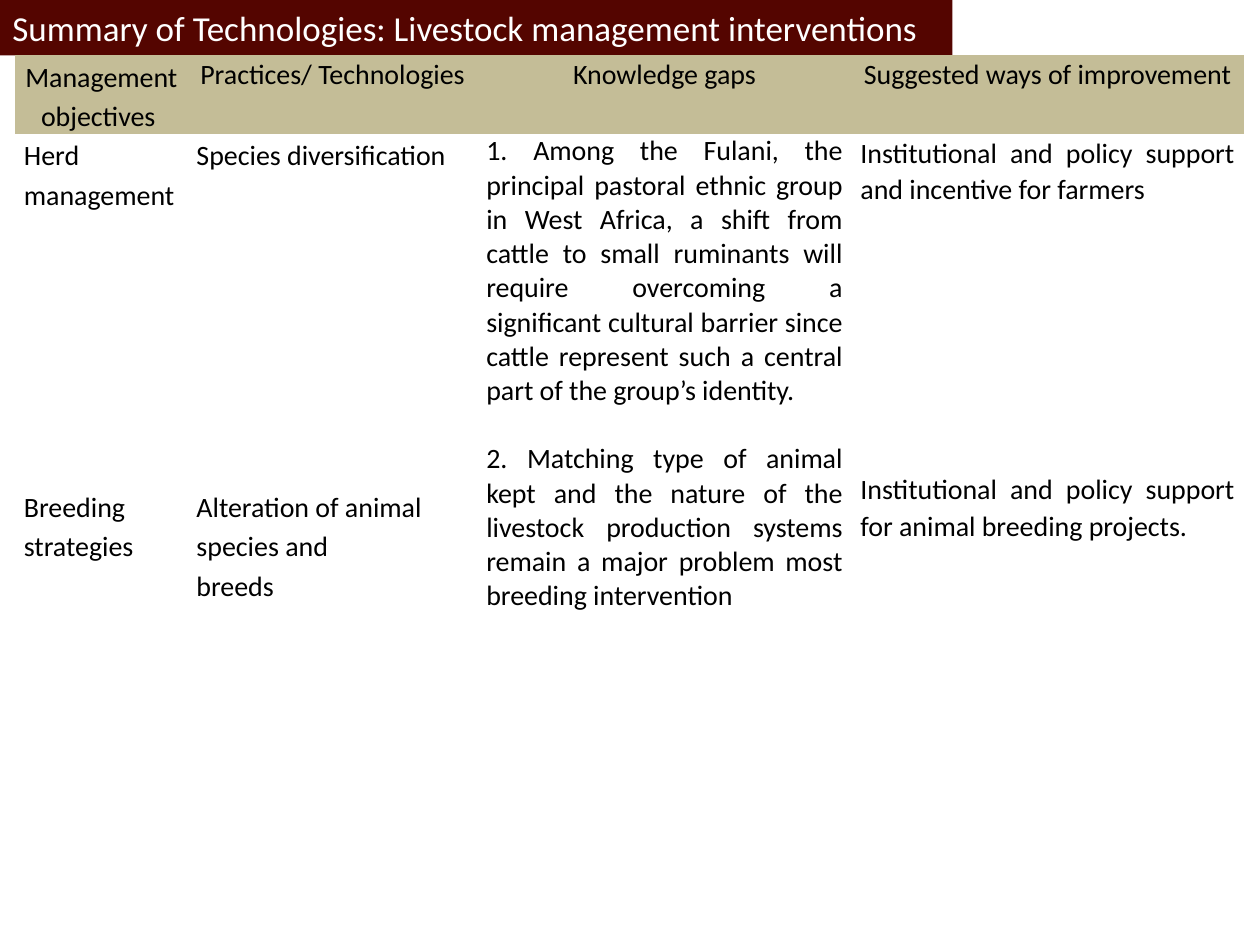
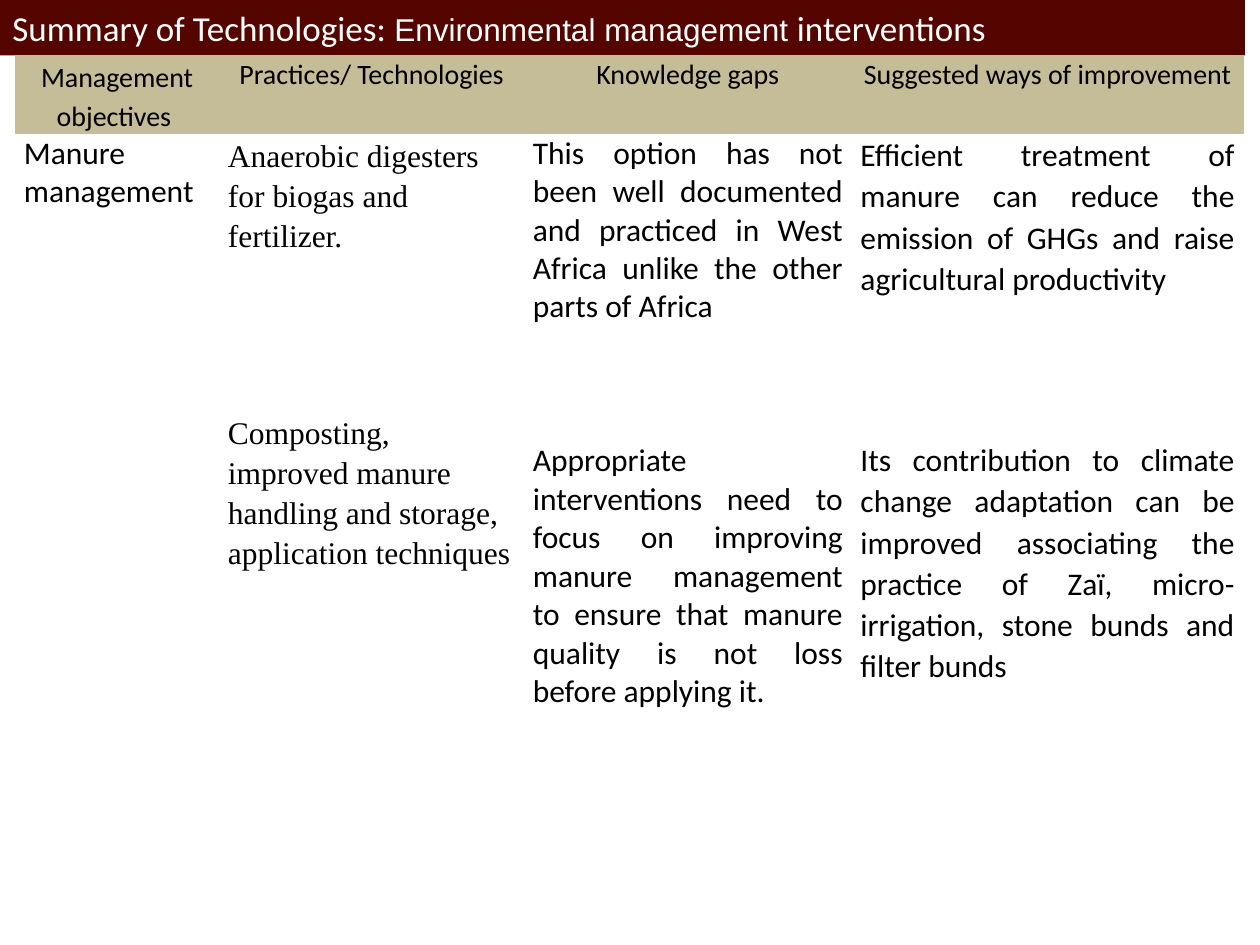
from pptx import Presentation
from pptx.dml.color import RGBColor
from pptx.enum.shapes import MSO_SHAPE
from pptx.enum.text import MSO_ANCHOR, PP_ALIGN as ALIGN
from pptx.oxml.ns import qn
from pptx.util import Inches, Pt

MAROON = RGBColor(0x54, 0x05, 0x00)
TAN = RGBColor(0xC4, 0xBD, 0x97)
WHITE = RGBColor(0xFF, 0xFF, 0xFF)
BLACK = RGBColor(0x00, 0x00, 0x00)
SANS, SERIF = "Calibri", "Times New Roman"
NO_STYLE_NO_GRID = "{2D5ABB26-0587-4C30-8999-92F81FD0307C}"

BAND_HEIGHT = 0.44
TABLE_LEFT = 0.12
HEADER_HEIGHT = 0.61
LOWER_HEIGHTS = [4.16, 0.25, 0.25, 0.32, 0.29, 0.37, 0.22]
# Column, first row and last row of each merged block
MERGES = [(2, 1, 8), (3, 3, 5), (0, 5, 7), (1, 5, 7)]
HEADERS = [
    ("Management objectives\u00a0", 1.15),
    ("Practices/ Technologies", 1.07),
    ("Knowledge gaps", 1.07),
    ("Suggested ways of improvement", 1.07),
]

# Body entries: row, column, paragraphs, line spacing, alignment, font,
# offset from the top of the cell (inches), gap between paragraphs (points)
SLIDES = [
    {
        "title": [("Summary of Technologies: Livestock management interventions", SANS, 20)],
        "band_width": 7.56,
        "columns": [1.37, 2.3, 2.97, 3.11],
        "first_row": 0.65,
        "size": 16,
        "body": [
            (1, 0, ["Herd", "management"], 1.15, ALIGN.LEFT, SANS, 0, 0),
            (1, 1, ["Species diversification"], 1.15, ALIGN.LEFT, SANS, 0, 0),
            (1, 2, ["1. Among the Fulani, the principal pastoral ethnic group in West Africa, "
                    "a shift from cattle to small ruminants will require overcoming a significant "
                    "cultural barrier since cattle represent such a central part of the group’s "
                    "identity.",
                    "2. Matching type of animal kept and the nature of the livestock production "
                    "systems remain a major problem most breeding intervention"],
             1.0, ALIGN.JUSTIFY, SANS, 0, 19.5),
            (1, 3, ["Institutional and policy support and incentive for farmers"],
             1.07, ALIGN.JUSTIFY, SANS, 0, 0),
            (2, 0, ["Breeding strategies"], 1.15, ALIGN.LEFT, SANS, 2.14, 0),
            (2, 1, ["Alteration of animal species and", "breeds"],
             1.15, ALIGN.LEFT, SANS, 2.14, 0),
            (2, 3, ["Institutional and policy support for animal breeding projects."],
             1.07, ALIGN.JUSTIFY, SANS, 2.02, 0),
        ],
    },
    {
        "title": [("Summary of Technologies: ", SANS, 20),
                  ("Environmental management ", "Arial", 18),
                  ("interventions", SANS, 20)],
        "band_width": 9.88,
        "columns": [1.62, 2.42, 2.6, 3.11],
        "first_row": 1.31,
        "size": 18,
        "body": [
            (1, 0, ["Manure", "management"], 1.0, ALIGN.LEFT, SANS, 0, 0),
            (1, 1, ["Anaerobic digesters for biogas and fertilizer."],
             1.15, ALIGN.LEFT, SERIF, 0, 0),
            (1, 2, ["This option has not been well documented and practiced in West Africa "
                    "unlike the other parts of Africa",
                    "Appropriate interventions need to focus on improving manure management to "
                    "ensure that manure quality is not loss before applying it."],
             1.0, ALIGN.JUSTIFY, SANS, 0, 66),
            (1, 3, ["Efficient treatment of manure can reduce the emission of GHGs and raise "
                    "agricultural productivity"], 1.07, ALIGN.JUSTIFY, SANS, 0, 0),
            (2, 1, ["Composting, improved manure handling and storage, application techniques"],
             1.15, ALIGN.LEFT, SERIF, 0.89, 0),
            (2, 3, ["Its contribution to climate change adaptation can be improved associating "
                    "the practice of Zaï, micro-irrigation, stone bunds and filter bunds"],
             1.07, ALIGN.JUSTIFY, SANS, 1.11, 0),
        ],
    },
]


def add_run(paragraph, text, font, size, color):
    run = paragraph.add_run()
    run.text = text
    run.font.name = font
    run.font.size = Pt(size)
    run.font.color.rgb = color


def fill_cell(cell, texts, spacing, align, font, size, top=0, gap=0):
    cell.margin_top = Inches(top)
    frame = cell.text_frame
    for index, text in enumerate(texts):
        paragraph = frame.add_paragraph() if index else frame.paragraphs[0]
        paragraph.alignment = align
        paragraph.line_spacing = spacing
        if index and gap:
            paragraph.space_before = Pt(gap)
        add_run(paragraph, text, font, size, BLACK)


presentation = Presentation()
presentation.slide_width = Inches(10)
presentation.slide_height = Inches(7.5)

for content in SLIDES:
    slide = presentation.slides.add_slide(presentation.slide_layouts[6])

    # Title band
    band = slide.shapes.add_shape(MSO_SHAPE.RECTANGLE, 0, 0,
                                  Inches(content["band_width"]), Inches(BAND_HEIGHT))
    band.shadow.inherit = False
    band.fill.solid()
    band.fill.fore_color.rgb = MAROON
    band.line.fill.background()
    band.text_frame.word_wrap = True
    band.text_frame.vertical_anchor = MSO_ANCHOR.TOP
    title = band.text_frame.paragraphs[0]
    title.alignment = ALIGN.LEFT
    for text, font, size in content["title"]:
        add_run(title, text, font, size, WHITE)

    # Table grid
    widths = content["columns"]
    heights = [HEADER_HEIGHT, content["first_row"]] + LOWER_HEIGHTS
    table = slide.shapes.add_table(
        len(heights), len(widths), Inches(TABLE_LEFT), Inches(BAND_HEIGHT),
        Inches(sum(widths)), Inches(sum(heights))).table
    table._tbl.tblPr.find(qn("a:tableStyleId")).text = NO_STYLE_NO_GRID
    table.horz_banding = False
    for column, width in zip(table.columns, widths):
        column.width = Inches(width)
    for row, height in zip(table.rows, heights):
        row.height = Inches(height)
    for cell in table.iter_cells():
        cell.margin_left = cell.margin_right = Inches(0.07)
        cell.margin_top = cell.margin_bottom = 0
        cell.fill.background()
    for column, first, last in MERGES:
        table.cell(first, column).merge(table.cell(last, column))

    # Header row
    for column, (text, spacing) in enumerate(HEADERS):
        cell = table.cell(0, column)
        cell.fill.solid()
        cell.fill.fore_color.rgb = TAN
        fill_cell(cell, [text], spacing, ALIGN.CENTER, SANS, 16)

    # Body cells
    for row, column, texts, spacing, align, font, top, gap in content["body"]:
        fill_cell(table.cell(row, column), texts, spacing, align, font,
                  content["size"], top, gap)

presentation.save("out.pptx")
